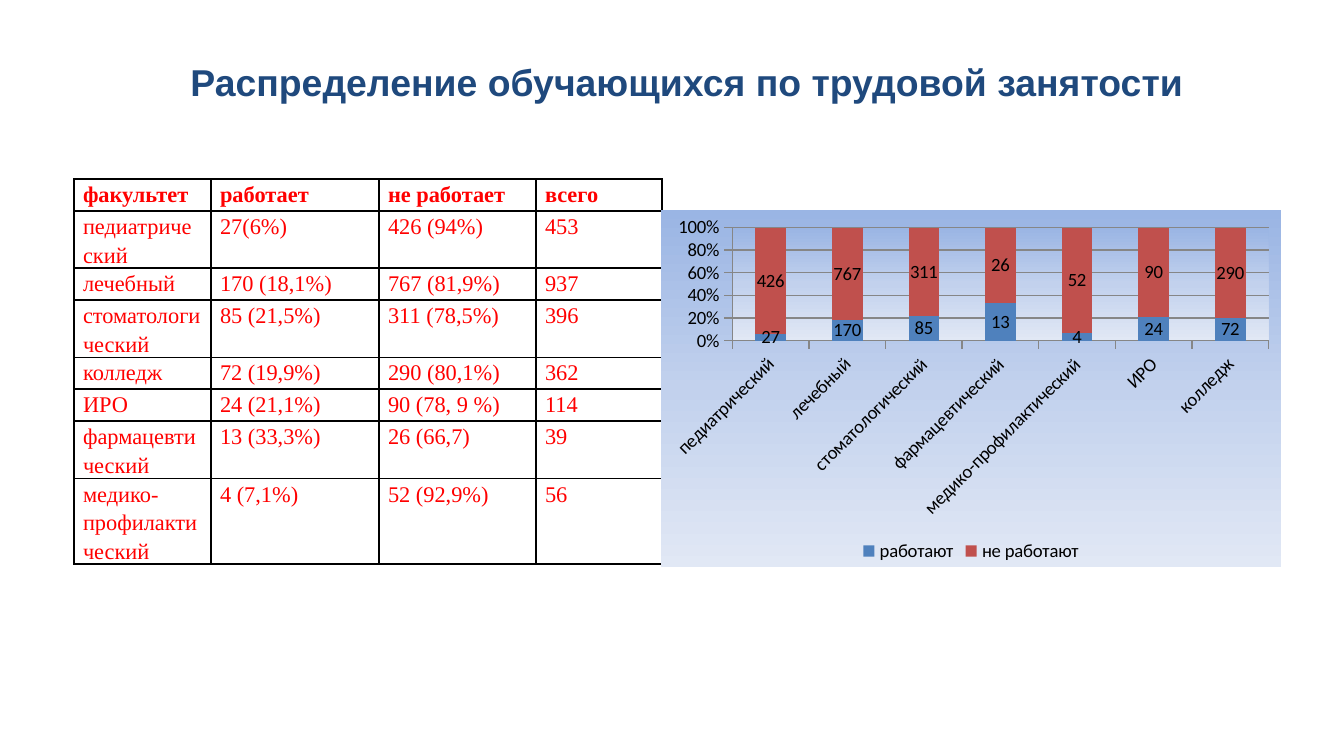
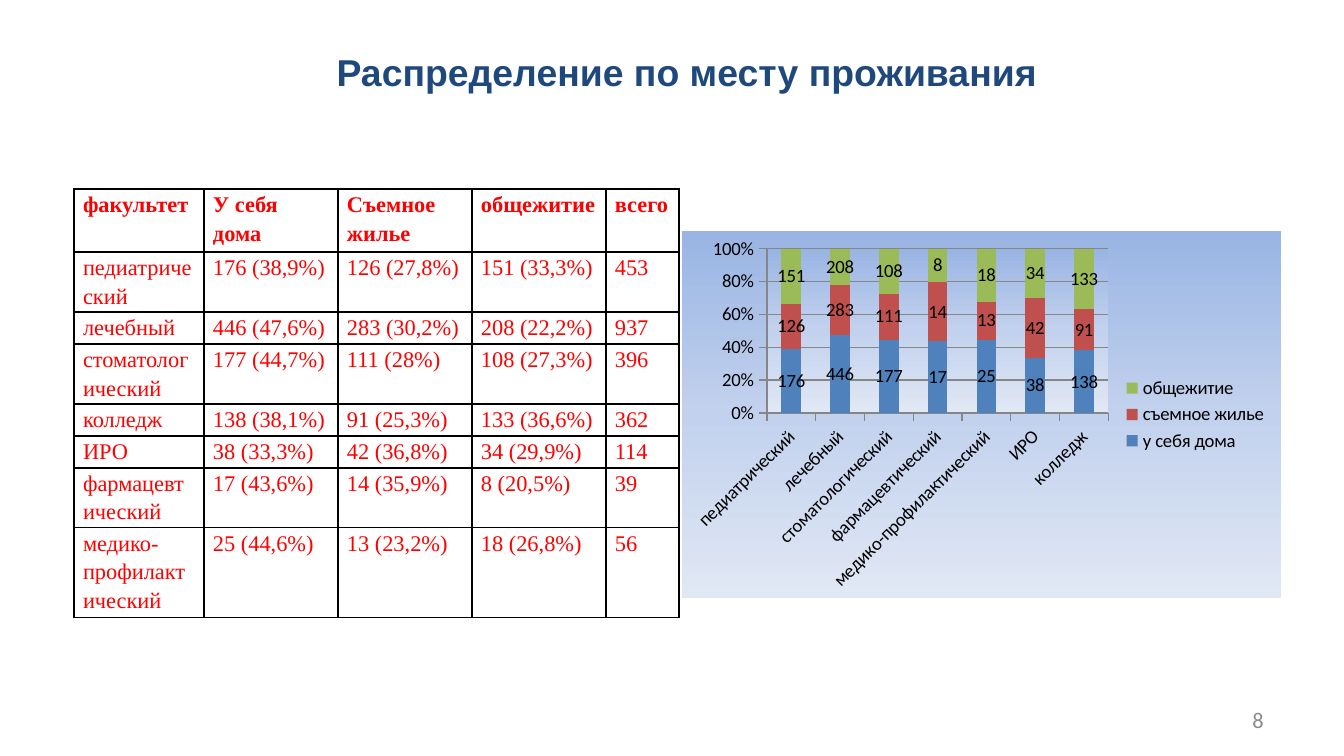
"""Build two slides on student employment and housing, each a table beside a chart."""
from lxml import etree
from pptx import Presentation
from pptx.chart.data import CategoryChartData as Data
from pptx.dml.color import RGBColor
from pptx.enum.chart import XL_CHART_TYPE as Kind, XL_LEGEND_POSITION as Spot
from pptx.enum.text import MSO_ANCHOR as Anchor, MSO_AUTO_SIZE as Auto, PP_ALIGN as Align
from pptx.oxml import parse_xml
from pptx.oxml.ns import nsdecls, qn
from pptx.util import Pt

hue = RGBColor.from_string
SCALE = 914400 / 134.4
NAVY, RED, BLACK, GREY, RULE = "1F497D", "FF0000", "000000", "8C8C8C", "868686"
TINTS = ["4F81BD", "C0504D", "9BBB59"]
STOPS = [(0, "9AB5E4"), (50, "C2D1ED"), (100, "E1E8F5")]
GRAD = "".join(
    f'<a:gs pos="{pos * 1000}"><a:srgbClr val="{tint}"/></a:gs>' for pos, tint in STOPS
)
PANEL = (
    f'<c:spPr {nsdecls("c", "a")}><a:gradFill><a:gsLst>{GRAD}</a:gsLst>'
    '<a:lin ang="5400000" scaled="0"/></a:gradFill><a:ln><a:noFill/></a:ln></c:spPr>'
)
CATS = ["педиатрический", "лечебный", "стоматологический", "фармацевтический",
        "медико-профилактический", "ИРО", "колледж"]


def px(*nums):
    """Turn px lengths into EMU."""
    return [round(num * SCALE) for num in nums]


def write(para, text, size, face, tint, bold=False):
    """Add one formatted run to a paragraph."""
    run = para.add_run()
    run.text = text
    font = run.font
    font.size, font.name, font.bold = Pt(size), face, bold
    font.color.rgb = hue(tint)


PAGES = [
    {
        "title": "Распределение обучающихся по трудовой занятости",
        "top": 52,
        "grid": (74, 179),
        "cols": [137, 168, 157, 126],
        "rows": [32] * 7 + [64],
        "cells": [
            "факультет|работает|не работает|всего",
            "педиатрический|27(6%)|426 (94%)|453",
            "лечебный|170 (18,1%)|767 (81,9%)|937",
            "стоматологический|85 (21,5%)|311 (78,5%)|396",
            "колледж|72 (19,9%)|290 (80,1%)|362",
            "ИРО|24 (21,1%)|90 (78, 9 %)|114",
            "фармацевтический|13 (33,3%)|26 (66,7)|39",
            "медико-профилактический|4 (7,1%)|52 (92,9%)|56",
        ],
        "chart": (661, 210, 620, 357),
        "key": Spot.BOTTOM,
        "series": {
            "работают": [27, 170, 85, 13, 4, 24, 72],
            "не работают": [426, 767, 311, 26, 52, 90, 290],
        },
        "page": None,
    },
    {
        "title": "Распределение по месту проживания",
        "top": 42,
        "grid": (74, 189),
        "cols": [130, 134, 134, 134, 73],
        "rows": [63, 60, 32, 60, 32, 32, 60, 90],
        "cells": [
            "факультет|У себя дома|Съемное жилье|общежитие|всего",
            "педиатрический|176 (38,9%)|126 (27,8%)|151 (33,3%)|453",
            "лечебный|446 (47,6%)|283 (30,2%)|208 (22,2%)|937",
            "стоматологический|177 (44,7%)|111 (28%)|108 (27,3%)|396",
            "колледж|138 (38,1%)|91 (25,3%)|133 (36,6%)|362",
            "ИРО|38 (33,3%)|42 (36,8%)|34 (29,9%)|114",
            "фармацевтический|17 (43,6%)|14 (35,9%)|8 (20,5%)|39",
            "медико-профилактический|25 (44,6%)|13 (23,2%)|18 (26,8%)|56",
        ],
        "chart": (682, 231, 599, 367),
        "key": Spot.RIGHT,
        "series": {
            "у себя дома": [176, 446, 177, 17, 25, 38, 138],
            "съемное жилье": [126, 283, 111, 14, 13, 42, 91],
            "общежитие": [151, 208, 108, 8, 18, 34, 133],
        },
        "page": "8",
    },
]

deck = Presentation()
deck.slide_width, deck.slide_height = px(1344, 756)

for page in PAGES:
    slide = deck.slides.add_slide(deck.slide_layouts[5])

    title = slide.shapes.title
    title.left, title.top, title.width, title.height = px(116, page["top"], 1142, 74)
    frame = title.text_frame
    frame.auto_size, frame.vertical_anchor = Auto.NONE, Anchor.TOP
    frame.paragraphs[0].alignment = Align.CENTER
    write(frame.paragraphs[0], page["title"], 20, "Arial", NAVY, True)

    cols, rows = page["cols"], page["rows"]
    size = px(*page["grid"], sum(cols), sum(rows))
    table = slide.shapes.add_table(len(rows), len(cols), *size).table
    table.first_row = table.horz_banding = False
    for col, wide in zip(table.columns, px(*cols)):
        col.width = wide
    for row, high in zip(table.rows, px(*rows)):
        row.height = high
    for i, line in enumerate(page["cells"]):
        for j, text in enumerate(line.split("|")):
            cell = table.cell(i, j)
            cell.margin_left, cell.margin_right = px(9, 9)
            cell.margin_top = cell.margin_bottom = 0
            props = cell._tc.get_or_add_tcPr()
            for side in "LRTB":
                edge = etree.SubElement(props, qn(f"a:ln{side}"), w="12700")
                fill = etree.SubElement(edge, qn("a:solidFill"))
                etree.SubElement(fill, qn("a:srgbClr"), val=BLACK)
            cell.fill.background()
            para = cell.text_frame.paragraphs[0]
            para.line_spacing = 1.15
            write(para, text, 12, "Times New Roman", RED, i == 0)

    data = Data()
    data.categories = CATS
    for name, vals in page["series"].items():
        data.add_series(name, vals)
    chart = slide.shapes.add_chart(
        Kind.COLUMN_STACKED_100, *px(*page["chart"]), data).chart
    chart.has_title = False
    chart.font.size, chart.font.name = Pt(10), "Calibri"
    chart.font.color.rgb = hue(BLACK)
    chart.has_legend = True
    chart.legend.position = page["key"]
    chart.legend.include_in_layout = False
    body = chart.element.find(qn("c:chart"))
    body.addnext(parse_xml(PANEL))
    body.find(qn("c:plotArea")).append(parse_xml(PANEL))

    plot = chart.plots[0]
    plot.gap_width, plot.overlap = 150, 100
    for bar, tint in zip(plot.series, TINTS):
        bar.format.fill.solid()
        bar.format.fill.fore_color.rgb = hue(tint)
        bar.data_labels.show_value = True

    cat, val = chart.category_axis, chart.value_axis
    cat.tick_labels.font.size = Pt(10)
    turn = cat._element.find(qn("c:txPr")).find(qn("a:bodyPr"))
    turn.set("rot", "-2700000")
    val.tick_labels.number_format = "0%"
    val.tick_labels.number_format_is_linked = False
    val.has_major_gridlines = True
    for part in (cat, val, val.major_gridlines):
        part.format.line.color.rgb = hue(RULE)
        part.format.line.width = Pt(0.75)

    if page["page"]:
        box = slide.shapes.add_textbox(*px(964, 700, 313, 40)).text_frame
        box.word_wrap, box.vertical_anchor = True, Anchor.MIDDLE
        box.paragraphs[0].alignment = Align.RIGHT
        write(box.paragraphs[0], page["page"], 12, "Calibri", GREY)

deck.save("out.pptx")
